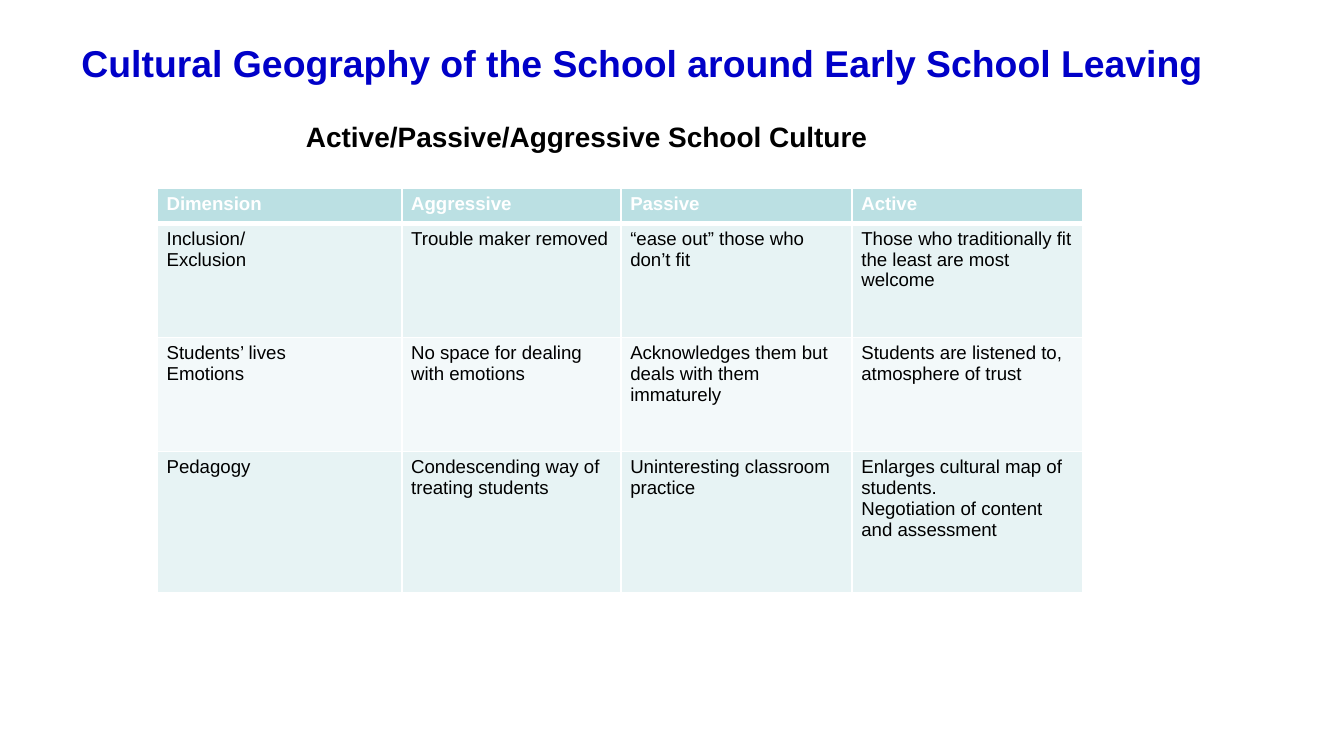
import pptx
import pptx.util
import pptx.dml.color
import pptx.enum.text
import pptx.oxml
import pptx.oxml.ns
from pptx.util import Inches

RGBColor = pptx.dml.color.RGBColor
BLUE = RGBColor(0x00, 0x00, 0xC8)
BLACK = RGBColor(0x00, 0x00, 0x00)
WHITE = RGBColor(0xFF, 0xFF, 0xFF)
HEADER_FILL = RGBColor(0xBB, 0xE0, 0xE3)
BAND_FILLS = [RGBColor(0xE7, 0xF3, 0xF4), RGBColor(0xF3, 0xF9, 0xFA)]

# Content
TITLE = "Cultural Geography of the School around Early School Leaving "
SUBTITLE = "Active/Passive/Aggressive School Culture "
ROWS = [
    ("Dimension", "Aggressive", "Passive", "Active"),
    ("Inclusion/\nExclusion", "Trouble maker removed",
     "“ease out” those who don’t fit",
     "Those who traditionally fit the least are most welcome"),
    ("Students’ lives\nEmotions", "No space for dealing with emotions",
     "Acknowledges them but deals with them immaturely",
     "Students are listened to, atmosphere of trust"),
    ("Pedagogy", "Condescending way of treating students",
     "Uninteresting classroom practice",
     "Enlarges cultural map of students.\nNegotiation of content and assessment"),
]
COLUMN_WIDTHS = [1.82, 1.63, 1.72, 1.72]
ROW_HEIGHTS = [0.26, 0.85, 0.85, 1.05]


def set_font(paragraph, size, color, bold):
    font = paragraph.font
    font.name = "Arial"
    font.size = pptx.util.Pt(size)
    font.color.rgb = color
    font.bold = bold


def fill_heading(shape, text, box, top_inset, size, color):
    shape.left, shape.top, shape.width, shape.height = map(Inches, box)
    frame = shape.text_frame
    frame.text = text
    frame.word_wrap = True
    frame.auto_size = pptx.enum.text.MSO_AUTO_SIZE.NONE
    frame.vertical_anchor = pptx.enum.text.MSO_ANCHOR.TOP
    frame.margin_top = Inches(top_inset)
    frame.margin_bottom = 0
    paragraph = frame.paragraphs[0]
    paragraph.alignment = pptx.enum.text.PP_ALIGN.CENTER
    paragraph.space_before = 0
    properties = paragraph._p.get_or_add_pPr()
    properties.set("marL", "0")
    properties.set("indent", "0")
    properties.append(pptx.oxml.parse_xml(
        f'<a:buNone {pptx.oxml.ns.nsdecls("a")}/>'))
    set_font(paragraph, size, color, True)


def add_borders(cell, top_width, bottom_width):
    properties = cell._tc.get_or_add_tcPr()
    widths = {"lnL": 1, "lnR": 1, "lnT": top_width, "lnB": bottom_width}
    for position, (tag, width) in enumerate(widths.items()):
        properties.insert(position, pptx.oxml.parse_xml(
            f'<a:{tag} {pptx.oxml.ns.nsdecls("a")} w="{pptx.util.Pt(width)}">'
            f'<a:solidFill><a:srgbClr val="{WHITE}"/></a:solidFill></a:{tag}>'))


# Widescreen slide, 16:9
presentation = pptx.Presentation()
presentation.slide_width = Inches(10)
presentation.slide_height = Inches(10) * 9 // 16
slide = presentation.slides.add_slide(presentation.slide_layouts[1])

# Title and subtitle
fill_heading(slide.shapes.title, TITLE, (0.29, 0.25, 9.06, 0.53), 0.05, 20, BLUE)
fill_heading(slide.placeholders[1], SUBTITLE, (1.01, 0.56, 6.77, 0.53), 0.33, 15, BLACK)

# Table of school culture dimensions
table = slide.shapes.add_table(
    len(ROWS), len(COLUMN_WIDTHS), Inches(1.17), Inches(1.4),
    Inches(sum(COLUMN_WIDTHS)), Inches(sum(ROW_HEIGHTS))).table
for column, width in zip(table.columns, COLUMN_WIDTHS):
    column.width = Inches(width)
for row, height in zip(table.rows, ROW_HEIGHTS):
    row.height = Inches(height)

for row_index, texts in enumerate(ROWS):
    header = row_index == 0
    for column_index, text in enumerate(texts):
        cell = table.cell(row_index, column_index)
        cell.text = text
        cell.margin_left = cell.margin_right = Inches(0.07)
        cell.margin_top = cell.margin_bottom = Inches(0.04)
        cell.fill.solid()
        cell.fill.fore_color.rgb = HEADER_FILL if header else BAND_FILLS[(row_index - 1) % 2]
        # The thick rule under the header is also the top of the first body row
        add_borders(cell, 3 if row_index == 1 else 1, 3 if header else 1)
        for paragraph in cell.text_frame.paragraphs:
            set_font(paragraph, 10, WHITE if header else BLACK, header)

presentation.save("out.pptx")
